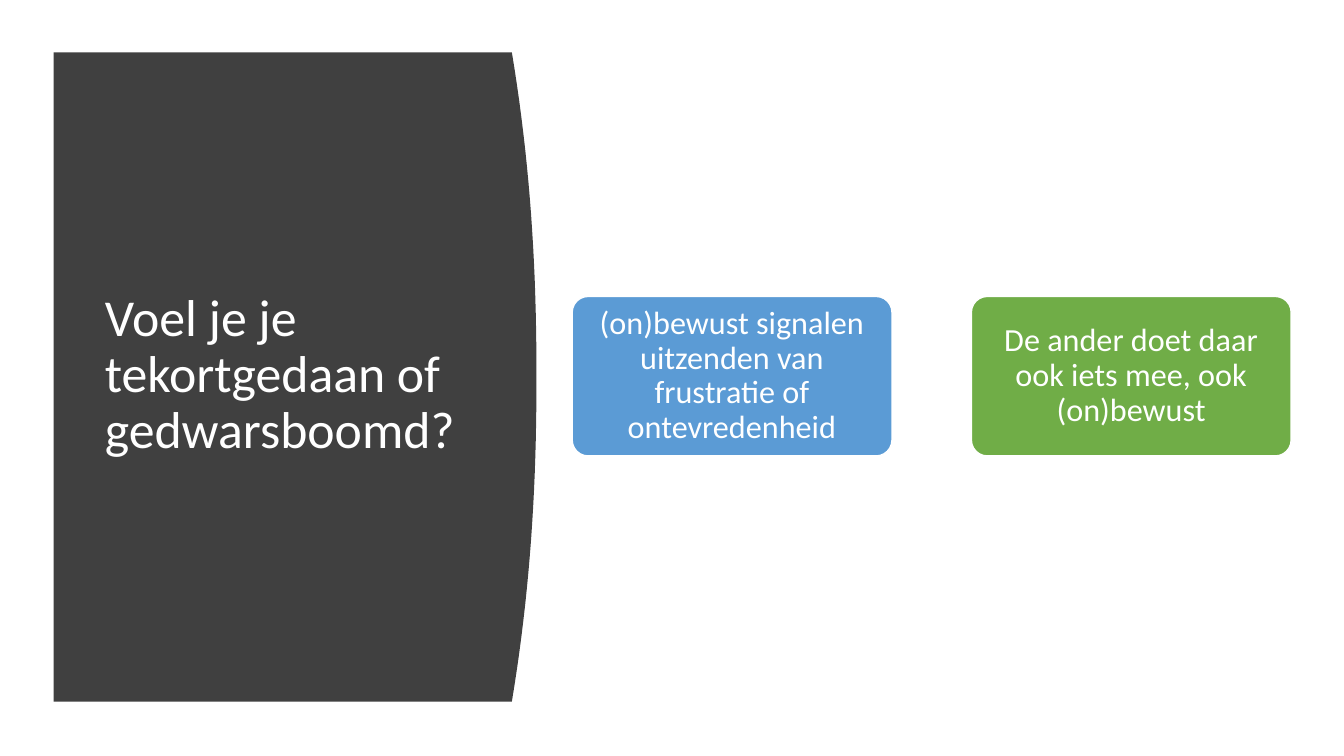
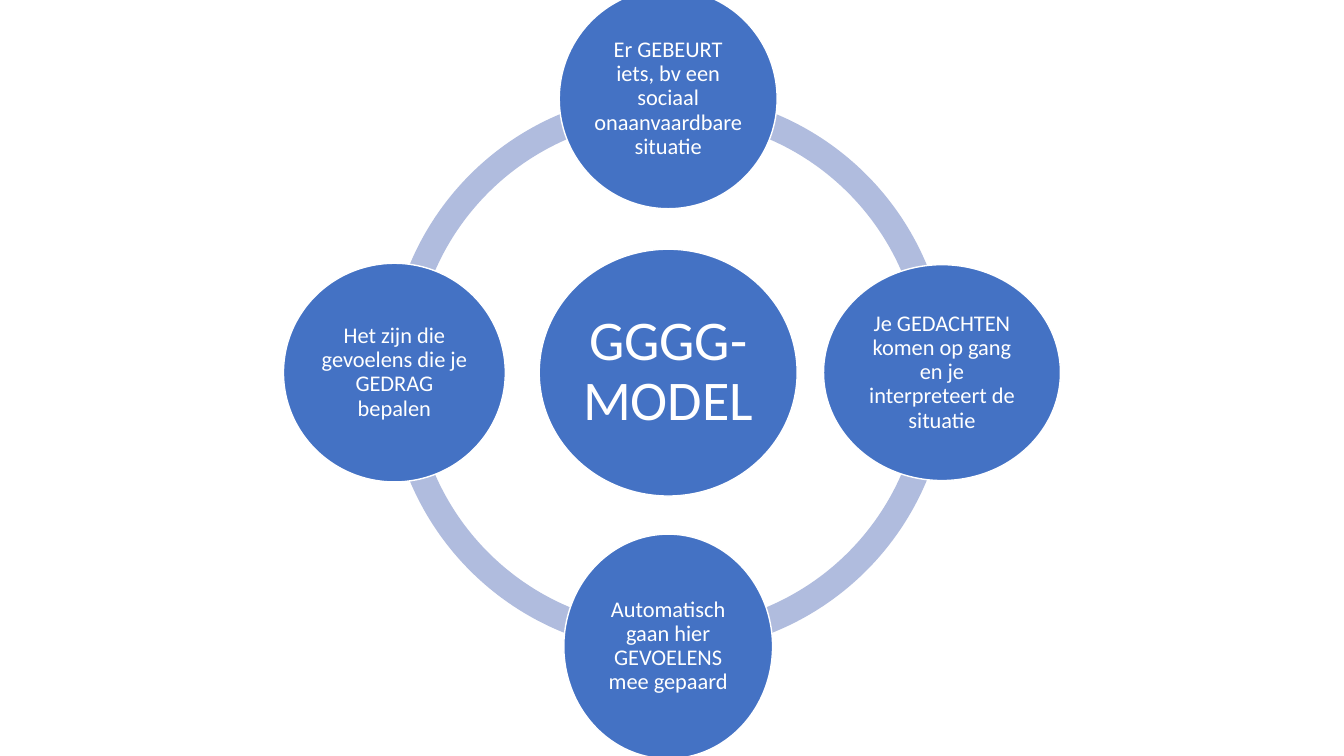
from math import cos, pi, sin

from pptx import Presentation
from pptx.dml.color import RGBColor
from pptx.enum.shapes import MSO_SHAPE as Preset
from pptx.enum.text import MSO_ANCHOR as Anchor, MSO_AUTO_SIZE as AutoSize, PP_ALIGN as Align
from pptx.util import Cm, Pt

FONT = "Calibri"
WHITE, DARK, SKY, GREEN = "FFFFFF", "404040", "5B9BD5", "70AD47"
BLUE, RING = "4472C4", "B0BCDE"
TITLE_ONLY, BLANK = 5, 6


def color(value):
    """Turn a hex string into a colour."""
    return RGBColor.from_string(value)


def paint(shape, fill, line=None):
    """Give a shape a flat fill and an optional thin outline."""
    shape.shadow.inherit = False
    shape.fill.solid()
    shape.fill.fore_color.rgb = color(fill)
    if line:
        shape.line.color.rgb = color(line)
        shape.line.width = Pt(1)
    else:
        shape.line.fill.background()


def write(shape, text, size, align):
    """Write one white paragraph, centred vertically in the shape."""
    frame = shape.text_frame
    frame.word_wrap = True
    frame.auto_size = AutoSize.NONE
    frame.vertical_anchor = Anchor.MIDDLE
    para = frame.paragraphs[0]
    para.alignment = align
    para.line_spacing = 0.9
    span = para.add_run()
    span.text = text
    span.font.name = FONT
    span.font.size = Pt(size)
    span.font.color.rgb = color(WHITE)


def add_node(page, preset, center, size, fill, text, points, inset):
    """Add a labelled shape around its centre point, in centimetres."""
    (x, y), (width, height) = center, size
    node = page.shapes.add_shape(
        preset, Cm(x - width / 2), Cm(y - height / 2), Cm(width), Cm(height))
    paint(node, fill, WHITE)
    frame = node.text_frame
    frame.margin_left = frame.margin_right = Cm(inset)
    frame.margin_top = frame.margin_bottom = Cm(inset)
    write(node, text, points, Align.CENTER)
    return node


def add_panel(page, left, top, right, height, bulge, steps=40):
    """Add the dark panel with its right edge curved outwards."""
    edge = []
    for step in range(steps + 1):
        share = step / steps
        curve = 1 - abs(2 * share - 1) ** 2.2
        edge.append((Cm(right + bulge * curve), Cm(top + height * share)))
    builder = page.shapes.build_freeform(Cm(left), Cm(top), scale=1.0)
    builder.add_line_segments(edge + [(Cm(left), Cm(top + height))], close=True)
    paint(builder.convert_to_shape(), DARK)


def add_title(page, text, left, top, width, height):
    """Place and format the title placeholder."""
    title = page.shapes.title
    title.left, title.top, title.width, title.height = map(Cm, (left, top, width, height))
    write(title, text, 37, Align.LEFT)
    tree = page.shapes.element
    tree.remove(title.element)
    tree.append(title.element)


def add_ring(page, center, size):
    """Add a ring made of four quarter arcs."""
    left, top = (Cm(middle - size / 2) for middle in center)
    for quarter in range(4):
        arc = page.shapes.add_shape(Preset.BLOCK_ARC, left, top, Cm(size), Cm(size))
        arc.adjustments[0] = 54 * quarter
        arc.adjustments[1] = 54 * (quarter + 1) % 216
        arc.adjustments[2] = 0.046
        paint(arc, RING)


def build_signals(deck):
    """Build the slide with the question and two responses."""
    page = deck.slides.add_slide(deck.slide_layouts[TITLE_ONLY])
    add_panel(page, 1.35, 1.32, 12.9, 16.36, 0.62)
    add_title(page, "Voel je je tekortgedaan of gedwarsboomd?", 2.39, 2.82, 9.5, 13.31)
    responses = [
        (SKY, "(on)bewust signalen uitzenden van frustratie of ontevredenheid"),
        (GREEN, "De ander doet daar ook iets mee, ook (on)bewust"),
    ]
    for index, (fill, text) in enumerate(responses):
        center = (18.45 + 10.06 * index, 9.48)
        box = add_node(page, Preset.ROUNDED_RECTANGLE, center, (8.06, 4.02),
                       fill, text, 23, 0.1)
        box.adjustments[0] = 0.1


def build_model(deck):
    """Build the slide with the four-step circle around its name."""
    page = deck.slides.add_slide(deck.slide_layouts[BLANK])
    center, radius = (16.84, 9.39), 6.9
    add_ring(page, center, 14.12)
    add_node(page, Preset.OVAL, center, (6.5, 6.22), BLUE, "GGGG-MODEL", 40, 0.14)
    stages = [
        ((5.49, 5.54), "Er GEBEURT iets, bv een sociaal onaanvaardbare situatie"),
        ((5.97, 5.44), "Je GEDACHTEN komen op gang en je interpreteert de situatie"),
        ((5.26, 5.66), "Automatisch gaan hier GEVOELENS mee gepaard"),
        ((5.59, 5.51), "Het zijn die gevoelens die je GEDRAG bepalen"),
    ]
    for index, (size, text) in enumerate(stages):
        angle = index * pi / 2
        place = (center[0] + radius * sin(angle), center[1] - radius * cos(angle))
        add_node(page, Preset.OVAL, place, size, BLUE, text, 16, 0.05)


def main():
    """Build and save the deck."""
    deck = Presentation()
    deck.slide_width, deck.slide_height = Cm(33.87), Cm(19.05)
    build_signals(deck)
    build_model(deck)
    deck.save("out.pptx")


if __name__ == "__main__":
    main()
